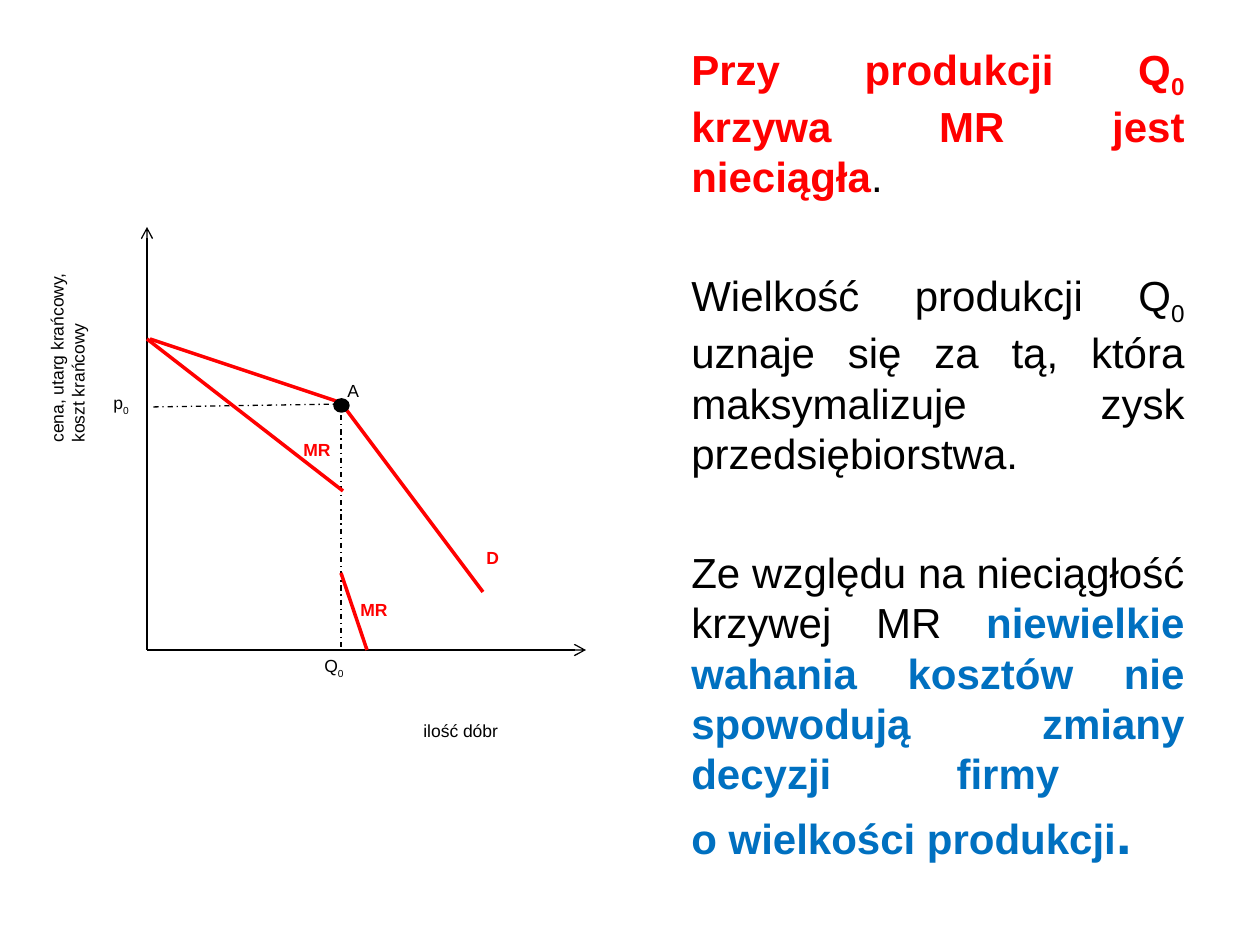
from lxml.etree import SubElement
from pptx import Presentation
from pptx.dml.color import RGBColor
from pptx.enum.dml import MSO_LINE
from pptx.enum.shapes import MSO_CONNECTOR, MSO_SHAPE
from pptx.enum.text import PP_ALIGN
from pptx.oxml.ns import qn
from pptx.util import Emu, Pt

PX = 914400 / 126
COLORS = {"black": "000000", "red": "FF0000", "blue": "0070C0"}


def px(n):
    return Emu(round(n * PX))


def rgb(name):
    return RGBColor.from_string(COLORS[name])


class Board:
    font = "Arial"
    label_size = 10
    body_size = 24
    thin = 0.75
    thick = 2

    def __init__(self, s):
        self.s = s

    def line(self, x1, y1, x2, y2, color="black", width=thin, dash=None, arrow=False):
        c = self.s.shapes.add_connector(
            MSO_CONNECTOR.STRAIGHT, px(x1), px(y1), px(x2), px(y2))
        c.line.color.rgb = rgb(color)
        c.line.width = Pt(width)
        if dash:
            c.line.dash_style = dash
        if arrow:
            SubElement(c.line._get_or_add_ln(), qn("a:tailEnd"), type="arrow")
        SubElement(c._element.spPr, qn("a:effectLst"))

    def curve(self, *ends):
        self.line(*ends, color="red", width=self.thick)

    def guide(self, *ends):
        self.line(*ends, dash=MSO_LINE.DASH_DOT)

    def dot(self, x, y, w, h):
        sp = self.s.shapes.add_shape(MSO_SHAPE.OVAL, px(x), px(y), px(w), px(h))
        sp.shadow.inherit = False
        sp.fill.solid()
        sp.fill.fore_color.rgb = rgb("black")
        sp.line.color.rgb = rgb("black")
        sp.line.width = Pt(self.thick)

    def box(self, x, y, w, h):
        sp = self.s.shapes.add_textbox(px(x), px(y), px(w), px(h))
        sp.text_frame.word_wrap = True
        return sp

    def style(self, p, size, color="black", bold=False):
        p.font.name = self.font
        p.font.size = Pt(size)
        p.font.bold = bold
        p.font.color.rgb = rgb(color)

    def run(self, p, text, sub=False):
        r = p.add_run()
        r.text = text
        if sub:
            r.font._element.set("baseline", "-25000")
        return r

    def label(self, text, x, y, w=76, h=36, sub=None, color="black", bold=False, rotation=0):
        sp = self.box(x, y, w, h)
        sp.rotation = rotation
        p = sp.text_frame.paragraphs[0]
        self.style(p, self.label_size, color, bold)
        self.run(p, text)
        if sub:
            self.run(p, sub, sub=True)

    def body(self, x, y, w, h, paragraphs, gap):
        tf = self.box(x, y, w, h).text_frame
        for i, parts in enumerate(paragraphs):
            p = tf.add_paragraph() if i else tf.paragraphs[0]
            p.alignment = PP_ALIGN.JUSTIFY
            if i:
                p.space_before = Pt(gap)
            self.style(p, self.body_size)
            for text, kind, color in parts:
                if kind == "break":
                    p.add_line_break()
                    continue
                r = self.run(p, text, sub=kind == "sub")
                if color:
                    r.font.bold = True
                    r.font.color.rgb = rgb(color)
                if kind == "big":
                    r.font.size = Pt(32)


def main():
    prs = Presentation()
    prs.slide_width, prs.slide_height = px(1260), px(945)
    b = Board(prs.slides.add_slide(prs.slide_layouts[6]))

    b.body(679, 37, 518, 808, [
        [("Przy produkcji Q", "", "red"), ("0", "sub", "red"),
         (" krzywa MR jest nieciągła", "", "red"), (".", "", None)],
        [("Wielkość produkcji Q", "", None), ("0", "sub", None),
         (" uznaje się za tą, która maksymalizuje zysk przedsiębiorstwa.", "", None)],
        [("Ze względu na nieciągłość krzywej MR ", "", None),
         ("niewielkie wahania kosztów nie spowodują zmiany decyzji firmy ", "", "blue"),
         ("", "break", None),
         ("o wielkości produkcji", "", "blue"), (".", "big", "blue")],
    ], gap=39)

    left, base, q0 = 147, 650, 341
    b.line(left, base, left, 227, arrow=True)
    b.line(left, base, 586, base, arrow=True)
    b.label("ilość dóbr", 411, 714, w=200)
    b.label("cena, utarg krańcowy, koszt krańcowy", -42, 304, w=233, h=69, rotation=270)

    b.guide(q0, 401, q0, base)
    b.guide(343, 404, 150, 407)
    b.label("A", 335, 374, w=50)
    b.label("p", 101, 386, sub="0")
    b.label("Q", 312, 649, sub="0")

    b.curve(150, 339, 339, 402)
    b.curve(345, 408, 483, 592)
    b.dot(335, 400, 13, 11)
    b.curve(left, 339, 343, 491)
    b.curve(q0, 573, 367, base)
    for text, x, y in [("D", 474, 541), ("MR", 348, 593), ("MR", 291, 433)]:
        b.label(text, x, y, color="red", bold=True)

    prs.save("out.pptx")


if __name__ == "__main__":
    main()
